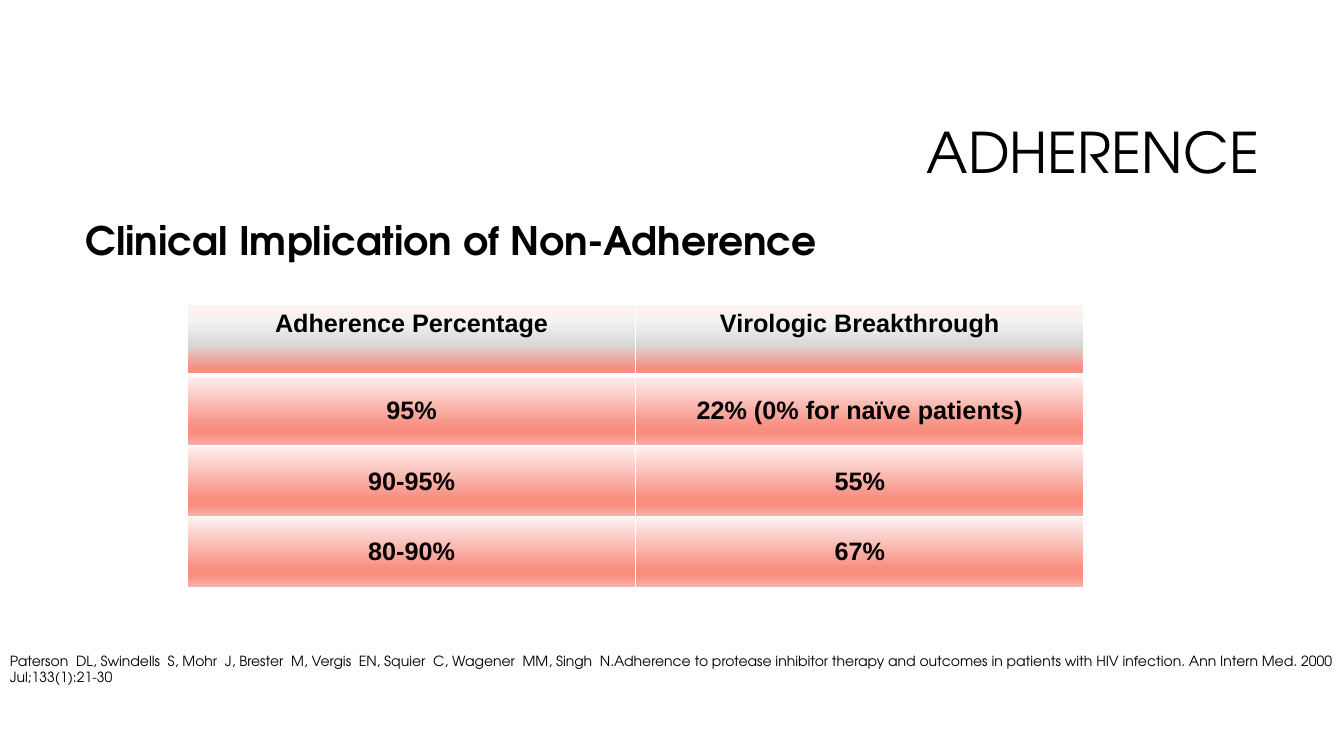
from dataclasses import dataclass

from lxml import etree
from pptx import Presentation
from pptx import util as u
from pptx.dml.color import RGBColor
from pptx.enum import text
from pptx.oxml.ns import qn


@dataclass(frozen=True)
class Theme:
    sans: str = "TeX Gyre Adventor"
    grid: str = "Arial"
    ink: str = "000000"
    rule: str = "FFFFFF"
    title: int = 40
    head: int = 28
    cell: int = 18
    note: int = 10
    top: tuple = ((7, "FEF2F1"), (24, "F2F2F2"), (56, "D9D9D9"), (90, "F78E80"))
    body: tuple = ((0, "FEF2F1"), (74, "F78E80"), (83, "F78E80"), (100, "F9B3AA"))


def write(frame, words, size, font, color, bold=False,
          align=text.PP_ALIGN.LEFT, anchor=text.MSO_ANCHOR.TOP, space=1.0):
    frame.word_wrap = True
    frame.vertical_anchor = anchor
    para = frame.paragraphs[0]
    para.text = words
    para.alignment = align
    para.line_spacing = space
    para.font.size = u.Pt(size)
    para.font.name = font
    para.font.bold = bold
    para.font.color.rgb = RGBColor.from_string(color)


def add(parent, tag, **attrs):
    return etree.SubElement(parent, qn(tag), {k: str(v) for k, v in attrs.items()})


def paint(cell, stops, rule, edges):
    """Draw the cell's borders (points by side) and its downward gradient."""
    props = cell._tc.get_or_add_tcPr()
    for side, width in edges.items():
        line = add(props, f"a:ln{side}", w=u.Pt(width))
        add(add(line, "a:solidFill"), "a:srgbClr", val=rule)
    grad = add(props, "a:gradFill", rotWithShape=1)
    steps = add(grad, "a:gsLst")
    for place, color in stops:
        add(add(steps, "a:gs", pos=place * 1000), "a:srgbClr", val=color)
    add(grad, "a:lin", ang=90 * 60000, scaled=0)


class Page:
    def __init__(self, deck, theme):
        self.theme = theme
        self.slide = deck.slides.add_slide(deck.slide_layouts[5])

    def title(self, words, box):
        shape = self.slide.shapes.title
        shape.left, shape.top, shape.width, shape.height = map(u.Inches, box)
        shape.text_frame.auto_size = text.MSO_AUTO_SIZE.NONE
        write(shape.text_frame, words, self.theme.title, self.theme.sans,
              self.theme.ink, align=text.PP_ALIGN.RIGHT,
              anchor=text.MSO_ANCHOR.MIDDLE, space=0.9)

    def label(self, words, box, size, **style):
        shape = self.slide.shapes.add_textbox(*map(u.Inches, box))
        write(shape.text_frame, words, size, self.theme.sans, self.theme.ink, **style)

    def table(self, rows, box):
        theme = self.theme
        frame = self.slide.shapes.add_table(
            len(rows), len(rows[0]), *map(u.Inches, box))
        for r, row in enumerate(rows):
            for c, words in enumerate(row):
                cell = frame.table.cell(r, c)
                first = r == 0
                write(cell.text_frame, words, theme.cell, theme.grid, theme.ink,
                      bold=True, align=text.PP_ALIGN.CENTER)
                cell.vertical_anchor = (
                    text.MSO_ANCHOR.TOP if first else text.MSO_ANCHOR.MIDDLE)
                edges = {"L": 1, "R": 1, "T": 3 if r == 1 else 1,
                         "B": 3 if first else 1}
                paint(cell, theme.top if first else theme.body, theme.rule, edges)


def main():
    deck = Presentation()
    deck.slide_width, deck.slide_height = u.Inches(13.33), u.Inches(7.5)
    theme = Theme()
    page = Page(deck, theme)
    page.title("ADHERENCE", (3.17, 0.84, 9.42, 1.41))
    page.label("Clinical Implication of Non-Adherence", (0.75, 2.15, 11.83, 4.93),
               theme.head, bold=True, space=0.9)
    page.table([
        ("Adherence Percentage", "Virologic Breakthrough"),
        ("95%", "22% (0% for naïve patients)"),
        ("90-95%", "55%"),
        ("80-90%", "67%"),
    ], (1.86, 3.02, 8.89, 2.81))
    page.label(
        "Paterson  DL, Swindells  S, Mohr  J, Brester  M, Vergis  EN, "
        "Squier  C, Wagener  MM, Singh  N.Adherence to protease inhibitor "
        "therapy and outcomes in patients with HIV infection. Ann Intern Med. "
        "2000 Jul;133(1):21-30", (0, 6.42, 13.33, 0.61), theme.note)
    deck.save("out.pptx")


if __name__ == "__main__":
    main()
